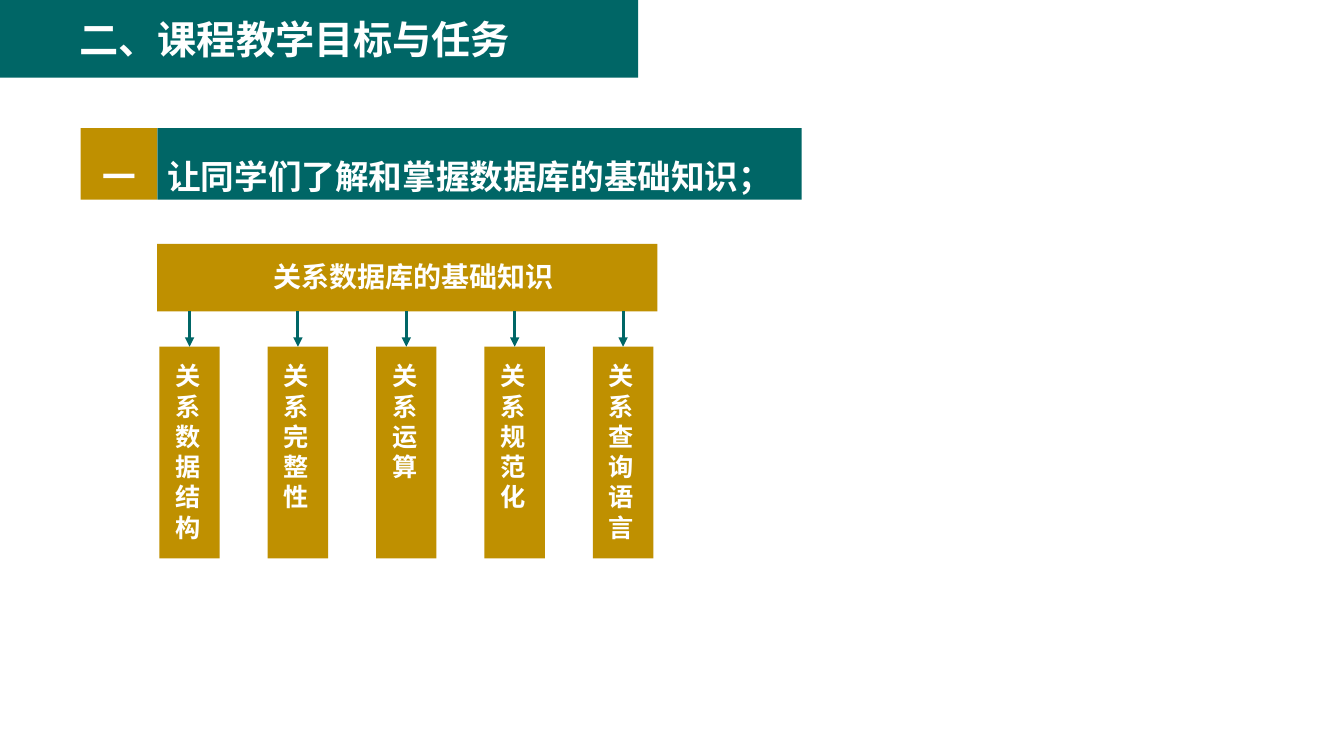
from dataclasses import dataclass

from lxml.etree import SubElement
from pptx import Presentation
from pptx.dml.color import RGBColor
from pptx.enum.shapes import MSO_CONNECTOR, MSO_SHAPE
from pptx.enum.text import MSO_ANCHOR, PP_ALIGN
from pptx.oxml.ns import qn
from pptx.util import Inches, Pt


@dataclass(frozen=True)
class Theme:
    teal: RGBColor = RGBColor(0x00, 0x66, 0x66)
    gold: RGBColor = RGBColor(0xBF, 0x90, 0x00)
    white: RGBColor = RGBColor(0xFF, 0xFF, 0xFF)
    heading_font: str = "Noto Sans CJK SC"
    topic_font: str = "Calibri"
    title_size: int = 28
    goal_size: int = 24
    root_size: int = 20
    topic_size: int = 18
    arrow_width: float = 2.25


THEME = Theme()
TOPICS = ["关系数据结构", "关系完整性", "关系运算", "关系规范化", "关系查询语言"]


def add_panel(page, left, top, width, height, color):
    panel = page.shapes.add_shape(
        MSO_SHAPE.RECTANGLE, Inches(left), Inches(top), Inches(width), Inches(height))
    panel.shadow.inherit = False
    panel.fill.solid()
    panel.fill.fore_color.rgb = color
    panel.line.fill.background()
    return panel


def write(shape, text, size, font=THEME.heading_font, align=PP_ALIGN.LEFT):
    frame = shape.text_frame
    frame.word_wrap = True
    para = frame.paragraphs[0]
    para.text = text
    para.alignment = align
    para.font.name = font
    para.font.size = Pt(size)
    para.font.bold = True
    para.font.color.rgb = THEME.white
    # Chinese characters take the East Asian typeface
    SubElement(para.font._element, qn("a:ea"), typeface=THEME.heading_font)
    return para


def add_label(page, left, top, width, height, text, size, **style):
    label = page.shapes.add_textbox(
        Inches(left), Inches(top), Inches(width), Inches(height))
    write(label, text, size, **style)


def add_arrow(page, center, top, target):
    arrow = page.shapes.add_connector(
        MSO_CONNECTOR.STRAIGHT, Inches(center), Inches(top), Inches(center), target.top)
    arrow.end_connect(target, 0)
    arrow.line.color.rgb = THEME.teal
    arrow.line.width = Pt(THEME.arrow_width)
    SubElement(arrow.line._get_or_add_ln(), qn("a:tailEnd"), type="triangle")
    SubElement(arrow._element.spPr, qn("a:effectLst"))


def add_title_band(page, left, top, width, height):
    add_panel(page, left, top, width, height, THEME.teal)
    add_label(page, left + 0.69, top + 0.1, 4.7, 0.57,
              "二、课程教学目标与任务", THEME.title_size)


def add_goal_bar(page, left, top, width, height, number, goal):
    number_width = 0.76
    parts = [
        (left + number_width, width - number_width, THEME.teal, goal, PP_ALIGN.LEFT),
        (left, number_width, THEME.gold, number, PP_ALIGN.CENTER),
    ]
    for part_left, part_width, color, text, align in parts:
        panel = add_panel(page, part_left, top, part_width, height, color)
        para = write(panel, text, THEME.goal_size, align=align)
        para.line_spacing = 1.5
        frame = panel.text_frame
        frame.vertical_anchor = MSO_ANCHOR.BOTTOM
        frame.margin_top, frame.margin_bottom = 0, Inches(0.03)


def add_topic_tree(page, left, top, width, height, root, topics):
    root_height, topic_width, topic_height = 0.67, 0.6, 2.1
    topic_top = top + height - topic_height
    first_left, last_left = left + 0.02, left + width - 0.64
    pitch = (last_left - first_left) / (len(topics) - 1)

    # Root box
    add_panel(page, left, top, width, root_height, THEME.gold)
    add_label(page, left + 1.05, top + 0.11, 3.2, 0.44, root, THEME.root_size)

    # Topic columns, narrow enough for one character a line
    for index, topic in enumerate(topics):
        topic_left = first_left + index * pitch
        column = add_panel(
            page, topic_left, topic_top, topic_width, topic_height, THEME.gold)
        add_label(page, topic_left + 0.06, topic_top + 0.09, 0.4, 1.92,
                  topic, THEME.topic_size, font=THEME.topic_font)
        add_arrow(page, topic_left + topic_width / 2, top + root_height, column)


def main():
    deck = Presentation()
    deck.slide_width, deck.slide_height = Inches(13.33), Inches(7.5)
    page = deck.slides.add_slide(deck.slide_layouts[6])
    add_title_band(page, 0, 0, 6.33, 0.77)
    add_topic_tree(page, 1.56, 2.42, 4.96, 3.12, "关系数据库的基础知识", TOPICS)
    add_goal_bar(page, 0.8, 1.27, 7.15, 0.71, "一",
                 "让同学们了解和掌握数据库的基础知识；")
    deck.save("out.pptx")


if __name__ == "__main__":
    main()
